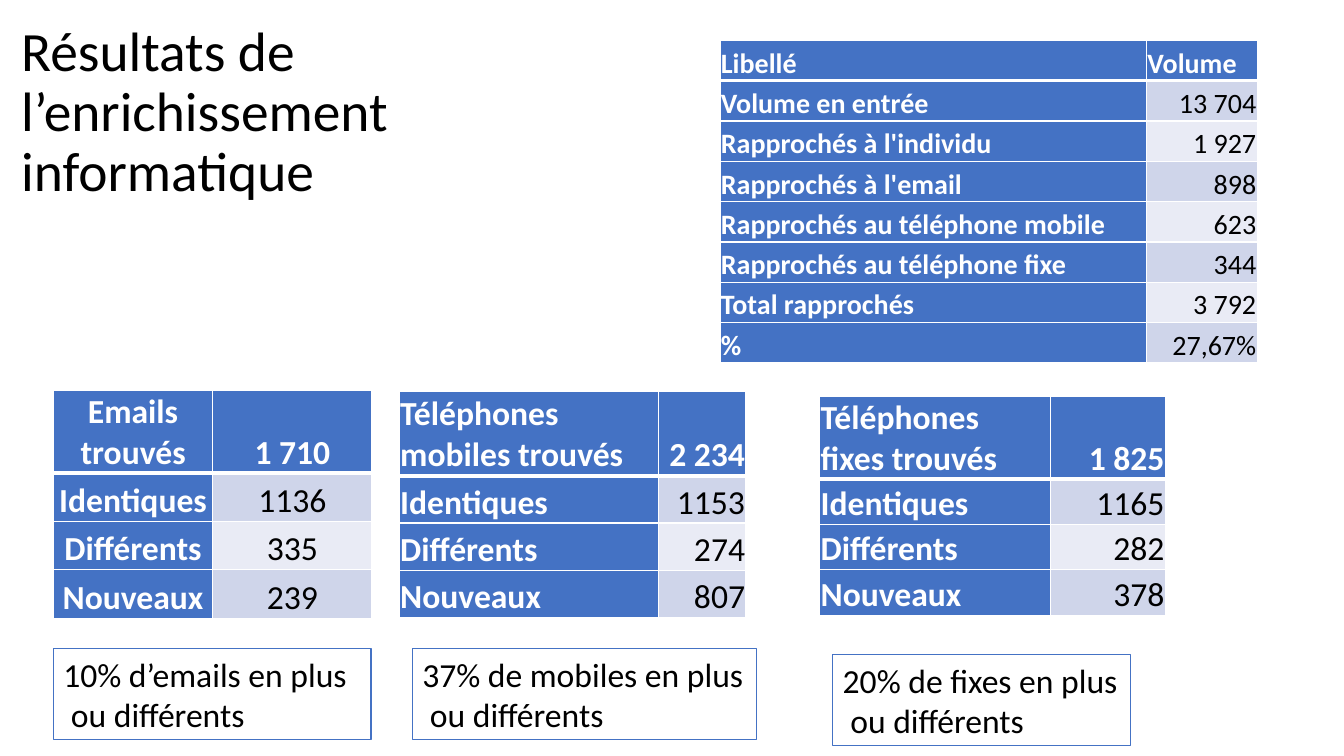
from lxml import etree
from pptx import Presentation
from pptx.dml.color import RGBColor
from pptx.enum.shapes import MSO_SHAPE
from pptx.enum.text import MSO_ANCHOR, MSO_AUTO_SIZE, PP_ALIGN
from pptx.oxml.ns import qn
from pptx.util import Inches, Pt

LEFT, CENTER, RIGHT = PP_ALIGN.LEFT, PP_ALIGN.CENTER, PP_ALIGN.RIGHT
BOTTOM, MIDDLE = MSO_ANCHOR.BOTTOM, MSO_ANCHOR.MIDDLE
RECTANGLE = MSO_SHAPE.RECTANGLE
GROW_SHAPE, NO_RESIZE = MSO_AUTO_SIZE.SHAPE_TO_FIT_TEXT, MSO_AUTO_SIZE.NONE

FONT = "Calibri"
BLUE, WHITE, BLACK = "4472C4", "FFFFFF", "000000"
BANDS = ("E9EBF5", "CFD5EA")

SUMMARY = [
    ("Libellé", "Volume"),
    ("Volume en entrée", "13 704"),
    ("Rapprochés à l'individu", "1 927"),
    ("Rapprochés à l'email", "898"),
    ("Rapprochés au téléphone mobile", "623"),
    ("Rapprochés au téléphone fixe", "344"),
    ("Total rapprochés", "3 792"),
    ("%", "27,67%"),
]
CATEGORIES = ("Identiques", "Différents", "Nouveaux")


def color(hex_string):
    return RGBColor.from_string(hex_string)


def format_text(text_frame, size, text_color, bold=False, alignment=LEFT):
    for paragraph in text_frame.paragraphs:
        paragraph.alignment = alignment
        for run in paragraph.runs:
            run.font.name = FONT
            run.font.size = Pt(size)
            run.font.bold = bold
            run.font.color.rgb = color(text_color)


def set_borders(cell, row_index):
    widths = {"L": 1, "R": 1, "T": 3 if row_index == 1 else 1, "B": 3 if row_index == 0 else 1}
    properties = cell._tc.get_or_add_tcPr()
    for side, width in widths.items():
        line = etree.SubElement(properties, qn("a:ln" + side), w=str(Pt(width)))
        fill = etree.SubElement(line, qn("a:solidFill"))
        etree.SubElement(fill, qn("a:srgbClr"), val=WHITE)


def add_title(slide, text):
    title = slide.shapes.title
    title.left, title.top = Inches(0.11), Inches(0.4)
    title.width, title.height = Inches(6.66), Inches(1.45)
    text_frame = title.text_frame
    text_frame.text = text
    text_frame.word_wrap = True
    text_frame.auto_size = NO_RESIZE
    text_frame.vertical_anchor = MIDDLE
    text_frame.margin_right = Inches(0.3)
    text_frame.paragraphs[0].line_spacing = 0.9
    format_text(text_frame, 39.6, BLACK)


def add_data_table(slide, left, top, column_widths, header_height, row_height, rows, size,
                   label_alignment=LEFT, header_alignment=RIGHT, value_alignment=RIGHT):
    height = header_height + row_height * (len(rows) - 1)
    table = slide.shapes.add_table(len(rows), 2, Inches(left), Inches(top),
                                   Inches(sum(column_widths)), Inches(height)).table
    for column, width in zip(table.columns, column_widths):
        column.width = Inches(width)
    for row_index, values in enumerate(rows):
        is_header = row_index == 0
        table.rows[row_index].height = Inches(header_height if is_header else row_height)
        for column_index, value in enumerate(values):
            cell = table.cell(row_index, column_index)
            is_label = column_index == 0
            is_blue = is_header or is_label
            set_borders(cell, row_index)
            cell.fill.solid()
            cell.fill.fore_color.rgb = color(BLUE if is_blue else BANDS[row_index % 2])
            cell.margin_left = cell.margin_right = cell.margin_top = Inches(0.01)
            cell.margin_bottom = 0
            cell.vertical_anchor = BOTTOM
            cell.text_frame.text = value
            if is_label:
                alignment = label_alignment
            else:
                alignment = header_alignment if is_header else value_alignment
            format_text(cell.text_frame, size, WHITE if is_blue else BLACK, is_blue, alignment)


def add_note(slide, left, top, width, text, wrap=False):
    note = slide.shapes.add_shape(RECTANGLE, Inches(left), Inches(top), Inches(width), Inches(0.91))
    note.shadow.inherit = False
    note.fill.background()
    note.line.color.rgb = color(BLUE)
    note.line.width = Pt(0.75)
    text_frame = note.text_frame
    text_frame.text = text
    text_frame.word_wrap = wrap
    text_frame.auto_size = GROW_SHAPE
    format_text(text_frame, 24, BLACK)


def found_rows(heading, total, counts):
    return [(heading, total), *zip(CATEGORIES, counts)]


def main():
    presentation = Presentation()
    presentation.slide_width, presentation.slide_height = Inches(13.33), Inches(7.5)
    slide = presentation.slides.add_slide(presentation.slide_layouts[5])
    add_title(slide, "Résultats de l’enrichissement informatique")

    # Matching summary
    add_data_table(slide, 7.14, 0.4, (4.23, 1.1), 0.4, 0.4, SUMMARY, 20, header_alignment=LEFT)

    # Contacts found, by channel
    add_data_table(slide, 3.96, 3.88, (2.57, 0.87), 0.84, 0.47,
                   found_rows("Téléphones mobiles trouvés", "2 234", ("1153", "274", "807")), 24)
    add_data_table(slide, 0.53, 3.87, (1.58, 1.58), 0.82, 0.48,
                   found_rows("Emails trouvés", "1 710", ("1136", "335", "239")), 24,
                   CENTER, CENTER, CENTER)
    add_data_table(slide, 8.13, 3.93, (2.29, 1.14), 0.82, 0.45,
                   found_rows("Téléphones fixes trouvés", "1 825", ("1165", "282", "378")), 24)

    # Gains under each table
    add_note(slide, 4.09, 6.43, 3.41, "37% de mobiles en plus\n ou différents")
    add_note(slide, 8.26, 6.49, 2.95, "20% de fixes en plus\n ou différents")
    add_note(slide, 0.53, 6.43, 3.15, "10% d’emails en plus\n ou différents", wrap=True)

    presentation.save("out.pptx")


if __name__ == "__main__":
    main()
